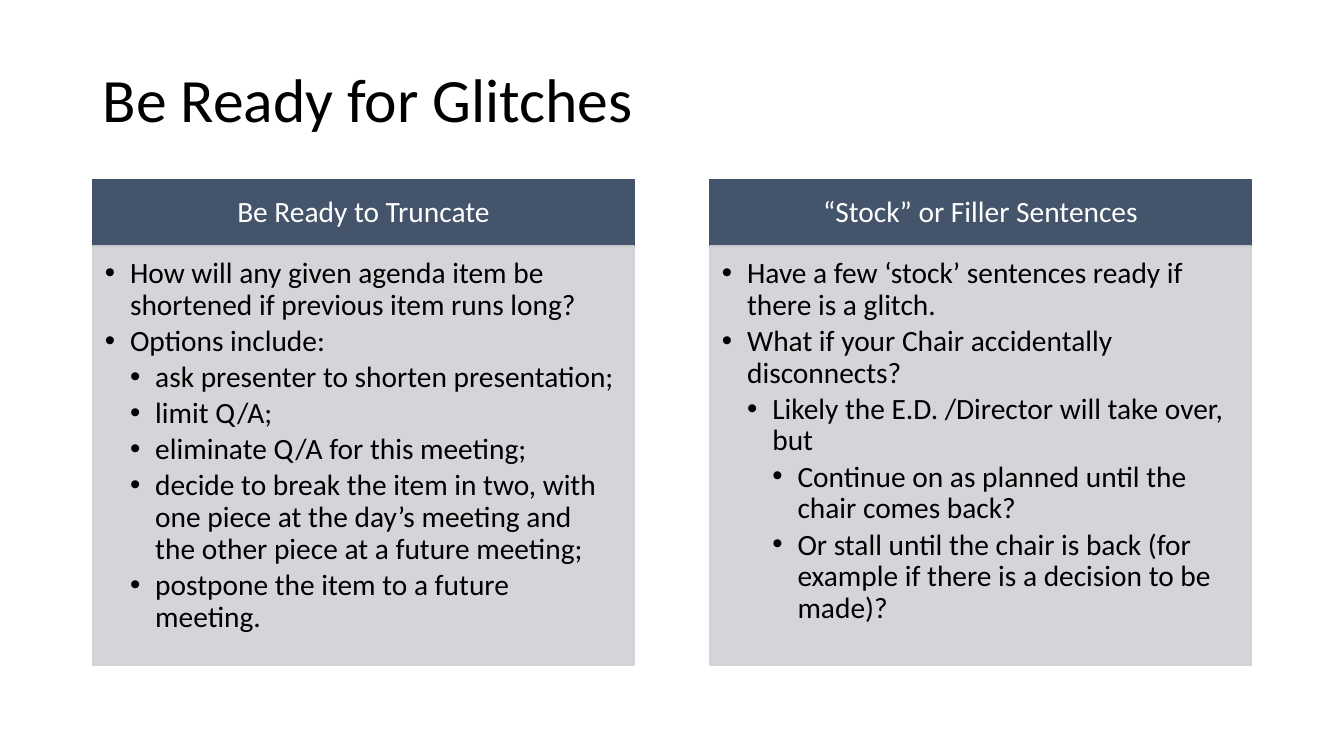
from lxml import etree
from pptx import Presentation
from pptx.dml.color import RGBColor
from pptx.enum.shapes import MSO_SHAPE
from pptx.enum.text import MSO_ANCHOR, PP_ALIGN
from pptx.oxml.ns import qn
from pptx.util import Inches, Pt

RECTANGLE = MSO_SHAPE.RECTANGLE
TOP, MIDDLE = MSO_ANCHOR.TOP, MSO_ANCHOR.MIDDLE
LEFT, CENTER = PP_ALIGN.LEFT, PP_ALIGN.CENTER

TITLE = "Be Ready for Glitches"
COLUMNS = [
    ("Be Ready to Truncate", [
        (1, "How will any given agenda item be shortened if previous item runs long?"),
        (1, "Options include:"),
        (2, "ask presenter to shorten presentation;"),
        (2, "limit Q/A;"),
        (2, "eliminate Q/A for this meeting;"),
        (2, "decide to break the item in two, with one piece at the day’s meeting "
            "and the other piece at a future meeting;"),
        (2, "postpone the item to a future meeting."),
    ]),
    ("“Stock” or Filler Sentences", [
        (1, "Have a few ‘stock’ sentences ready if there is a glitch."),
        (1, "What if your Chair accidentally disconnects?"),
        (2, "Likely the E.D. /Director will take over, but"),
        (3, "Continue on as planned until the chair comes back?"),
        (3, "Or stall until the chair is back (for example if there is a decision to be made)?"),
    ]),
]

FONT = "Calibri"
BLACK, WHITE, SLATE, GREY = "000000", "FFFFFF", "44546A", "CFD1D4"
SLIDE_WIDTH, SLIDE_HEIGHT = 13.33, 7.5
MARGIN = 0.92
CONTENT_WIDTH = SLIDE_WIDTH - 2 * MARGIN
COLUMN_WIDTH = 5.37
COLUMN_STEP = CONTENT_WIDTH - COLUMN_WIDTH
HEADER_TOP, HEADER_HEIGHT, BODY_HEIGHT = 1.78, 0.66, 4.16
INDENT = 0.25
TEXT_SIZE = 21


def color(value):
    return RGBColor.from_string(value)


def add_panel(page, place, fill, opacity=100):
    panel = page.shapes.add_shape(RECTANGLE, *map(Inches, place))
    panel.shadow.inherit = False
    panel.fill.solid()
    panel.fill.fore_color.rgb = color(fill)
    panel.line.fill.solid()
    panel.line.color.rgb = color(fill)
    panel.line.width = Pt(1)
    if opacity < 100:
        for shade in panel.element.spPr.iter(qn("a:srgbClr")):
            etree.SubElement(shade, qn("a:alpha")).set("val", str(opacity * 1000))
    return panel


def set_frame(box, insets, anchor):
    frame = box.text_frame
    frame.word_wrap = True
    frame.vertical_anchor = anchor
    frame.margin_left, frame.margin_top, frame.margin_right, frame.margin_bottom = map(Inches, insets)
    return frame


def write(para, text, size, ink, align=LEFT, after=0):
    para.text = text
    para.alignment = align
    para.line_spacing = 0.9
    para.space_after = Pt(after * size)
    for span in para.runs:
        span.font.name = FONT
        span.font.size = Pt(size)
        span.font.color.rgb = color(ink)


def add_bullet(para, depth):
    para.level = depth
    properties = para._p.get_or_add_pPr()
    properties.set("marL", str(Inches(depth * INDENT)))
    properties.set("indent", str(-Inches(INDENT)))
    etree.SubElement(properties, qn("a:buFont")).set("typeface", "Arial")
    etree.SubElement(properties, qn("a:buChar")).set("char", "•")


def add_column(page, left, heading, points):
    header = add_panel(page, (left, HEADER_TOP, COLUMN_WIDTH, HEADER_HEIGHT), SLATE)
    frame = set_frame(header, (0.16, 0.09, 0.16, 0.09), MIDDLE)
    write(frame.paragraphs[0], heading, TEXT_SIZE, WHITE, CENTER)

    body_top = HEADER_TOP + HEADER_HEIGHT
    body = add_panel(page, (left, body_top, COLUMN_WIDTH, BODY_HEIGHT), GREY, 90)
    frame = set_frame(body, (0.12, 0.12, 0.16, 0.18), TOP)
    for index, (depth, text) in enumerate(points):
        para = frame.add_paragraph() if index else frame.paragraphs[0]
        write(para, text, TEXT_SIZE, BLACK, after=0.15)
        add_bullet(para, depth)


def main():
    deck = Presentation()
    deck.slide_width, deck.slide_height = Inches(SLIDE_WIDTH), Inches(SLIDE_HEIGHT)
    page = deck.slides.add_slide(deck.slide_layouts[6])

    title = page.shapes.add_textbox(*map(Inches, (MARGIN, 0.4, CONTENT_WIDTH, 1.23)))
    frame = set_frame(title, (0.1, 0.05, 0.1, 0.05), MIDDLE)
    write(frame.paragraphs[0], TITLE, 44, BLACK)

    for index, (heading, points) in enumerate(COLUMNS):
        add_column(page, MARGIN + index * COLUMN_STEP, heading, points)

    deck.save("out.pptx")


if __name__ == "__main__":
    main()
